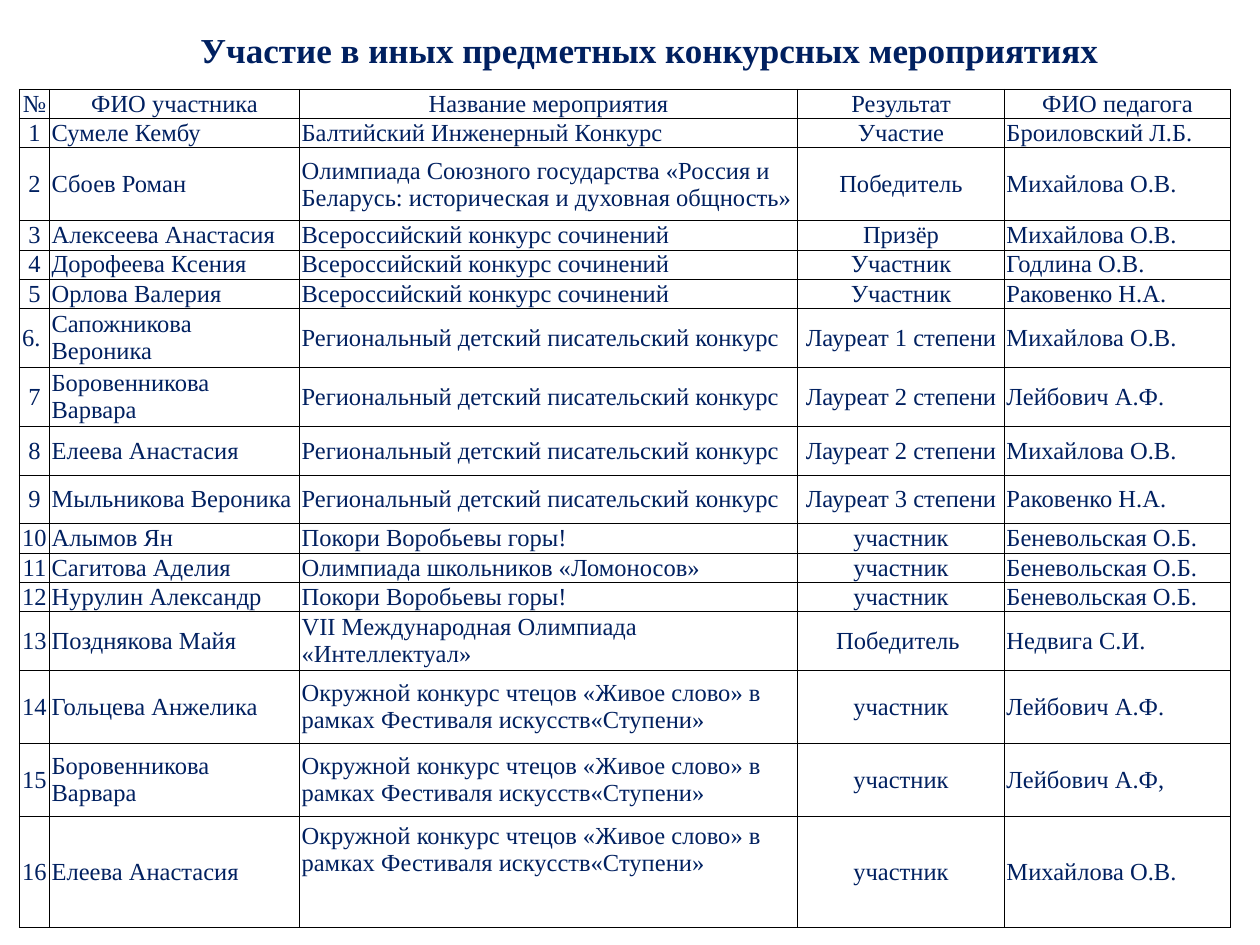
from lxml.etree import SubElement
from pptx import Presentation
from pptx.dml.color import RGBColor
from pptx.enum.text import MSO_ANCHOR, PP_ALIGN
from pptx.oxml.ns import qn
from pptx.util import Cm, Pt

FONT = "Times New Roman"
NAVY = "002060"
BLACK = "000000"

COLUMN_WIDTHS = [0.61, 5.04, 10.04, 4.17, 4.56]
CENTERED_COLUMNS = (0, 3)
ONE_LINE, MEDIUM, TWO_LINES, TALL, LAST = 0.59, 0.98, 1.19, 1.47, 2.24

ESSAY = "Всероссийский конкурс сочинений"
WRITING = "Региональный детский писательский конкурс"
HILLS = "Покори Воробьевы горы!"
READING = "Окружной конкурс чтецов «Живое слово» в рамках Фестиваля искусств«Ступени»"
UNION = "Олимпиада Союзного государства «Россия и Беларусь: историческая и духовная общность»"

HEADER = ("№", "ФИО участника", "Название мероприятия", "Результат", "ФИО педагога")

# Row height, then the texts of the row
ENTRIES = [
    (ONE_LINE, "1", "Сумеле Кембу", "Балтийский Инженерный Конкурс", "Участие", "Броиловский Л.Б."),
    (TALL, "2", "Сбоев Роман", UNION, "Победитель", "Михайлова О.В."),
    (ONE_LINE, "3", "Алексеева Анастасия", ESSAY, "Призёр", "Михайлова О.В."),
    (ONE_LINE, "4", "Дорофеева Ксения", ESSAY, "Участник", "Годлина О.В."),
    (ONE_LINE, "5", "Орлова Валерия", ESSAY, "Участник", "Раковенко Н.А."),
    (TWO_LINES, "6. ", "Сапожникова Вероника", WRITING, "Лауреат 1 степени", "Михайлова О.В."),
    (TWO_LINES, "7", "Боровенникова Варвара", WRITING, "Лауреат 2 степени", "Лейбович А.Ф."),
    (MEDIUM, "8", "Елеева Анастасия", WRITING, "Лауреат 2 степени", "Михайлова О.В."),
    (MEDIUM, "9", "Мыльникова Вероника", WRITING, "Лауреат 3 степени", "Раковенко Н.А."),
    (ONE_LINE, "10", "Алымов Ян", HILLS, "участник", "Беневольская О.Б."),
    (ONE_LINE, "11", "Сагитова Аделия", "Олимпиада школьников «Ломоносов»", "участник",
     "Беневольская О.Б."),
    (ONE_LINE, "12", "Нурулин Александр", HILLS, "участник", "Беневольская О.Б."),
    (TWO_LINES, "13", "Позднякова Майя", "VII Международная Олимпиада «Интеллектуал»",
     "Победитель ", "Недвига С.И."),
    (TALL, "14", "Гольцева Анжелика", READING, "участник", "Лейбович А.Ф."),
    (TALL, "15", "Боровенникова Варвара", READING, "участник", "Лейбович А.Ф,"),
    (LAST, "16", "Елеева Анастасия", READING, "участник", "Михайлова О.В."),
]


def color(value):
    return RGBColor.from_string(value)


def add_run(paragraph, text, size, bold=False):
    run = paragraph.add_run()
    run.text = text
    run.font.name = FONT
    run.font.size = Pt(size)
    run.font.bold = bold
    run.font.color.rgb = color(NAVY)


def add_title(slide, text):
    box = slide.shapes.add_textbox(Cm(0.79), Cm(0.41), Cm(24.61), Cm(1.88))
    frame = box.text_frame
    frame.word_wrap = True
    frame.vertical_anchor = MSO_ANCHOR.MIDDLE
    frame.margin_bottom = Cm(0.84)
    paragraph = frame.paragraphs[0]
    paragraph.alignment = PP_ALIGN.CENTER
    add_run(paragraph, text, 20, bold=True)


def set_borders(cell, value, width):
    properties = cell._tc.get_or_add_tcPr()
    for side in ("a:lnL", "a:lnR", "a:lnT", "a:lnB"):
        line = SubElement(properties, qn(side), w=str(Pt(width)))
        fill = SubElement(line, qn("a:solidFill"))
        SubElement(fill, qn("a:srgbClr"), val=value)


def fill_cell(cell, text, centered, space_after):
    cell.vertical_anchor = MSO_ANCHOR.MIDDLE
    cell.margin_left = cell.margin_right = Cm(0.04)
    cell.margin_top = cell.margin_bottom = 0
    set_borders(cell, BLACK, 0.5)
    cell.fill.background()
    paragraph = cell.text_frame.paragraphs[0]
    paragraph.alignment = PP_ALIGN.CENTER if centered else PP_ALIGN.LEFT
    paragraph.space_after = Pt(space_after)
    add_run(paragraph, text, 14)


def add_results_table(slide):
    rows = [(ONE_LINE, *HEADER), *ENTRIES]
    height = sum(row[0] for row in rows)
    frame = slide.shapes.add_table(len(rows), len(COLUMN_WIDTHS), Cm(0.39), Cm(1.8),
                                   Cm(sum(COLUMN_WIDTHS)), Cm(height))
    table = frame.table
    table.first_row = table.horz_banding = False
    for column, width in zip(table.columns, COLUMN_WIDTHS):
        column.width = Cm(width)
    for row_index, (row_height, *texts) in enumerate(rows):
        table.rows[row_index].height = Cm(row_height)
        is_header = row_index == 0
        for column_index, text in enumerate(texts):
            centered = is_header or column_index in CENTERED_COLUMNS
            fill_cell(table.cell(row_index, column_index), text, centered,
                      0 if is_header else 10)
    # The last event name sits above the middle of its cell
    table.cell(len(rows) - 1, 2).margin_bottom = Cm(0.89)


def main():
    presentation = Presentation()
    presentation.slide_width = Cm(25.4)
    presentation.slide_height = Cm(19.05)
    slide = presentation.slides.add_slide(presentation.slide_layouts[6])
    add_results_table(slide)
    add_title(slide, "Участие в иных предметных конкурсных мероприятиях")
    presentation.save("out.pptx")


if __name__ == "__main__":
    main()
